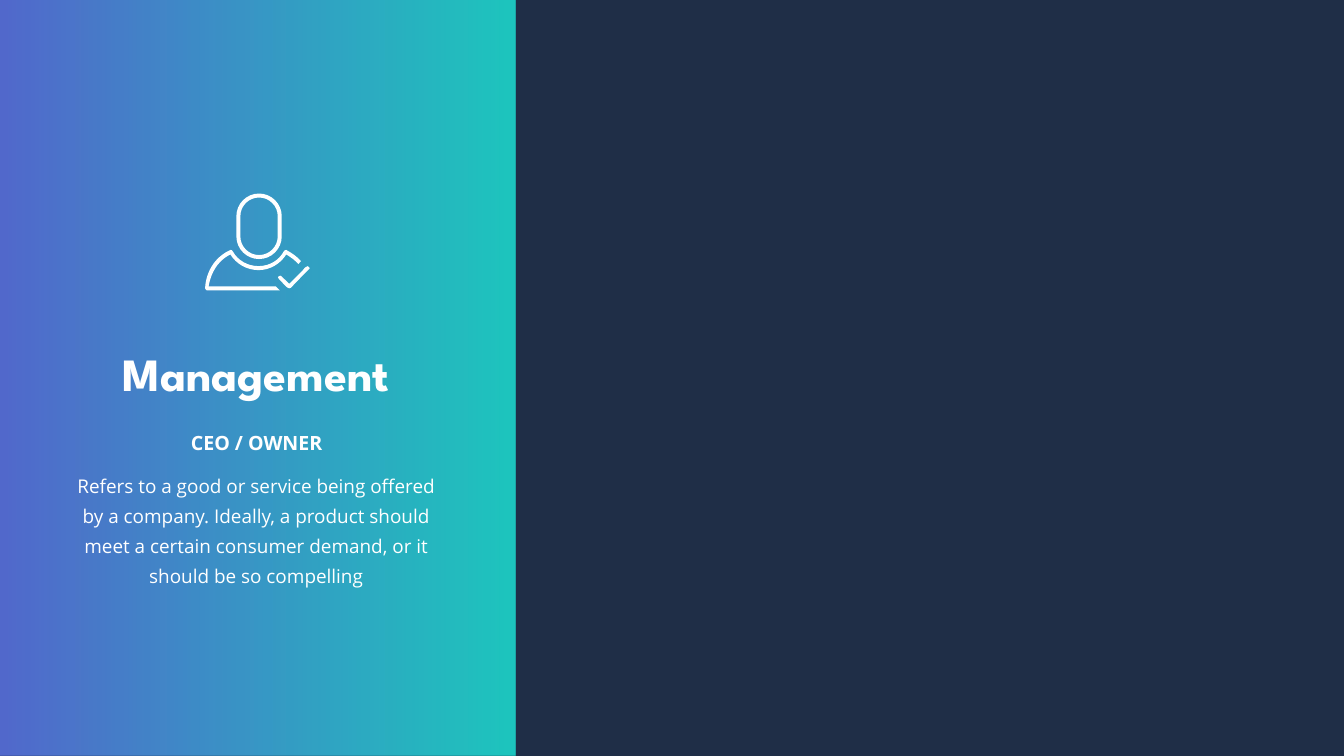
from dataclasses import dataclass

from lxml import etree
from pptx import Presentation
from pptx.dml.color import RGBColor
from pptx.enum.shapes import MSO_SHAPE
from pptx.enum.text import MSO_ANCHOR, MSO_AUTO_SIZE, PP_ALIGN
from pptx.oxml.ns import qn
from pptx.util import Pt

RECT = MSO_SHAPE.RECTANGLE
CENTER = PP_ALIGN.CENTER
TOP, MIDDLE = MSO_ANCHOR.TOP, MSO_ANCHOR.MIDDLE
GROW = MSO_AUTO_SIZE.SHAPE_TO_FIT_TEXT


@dataclass(frozen=True)
class Theme:
    """Colours, fonts and type sizes of the slide."""
    background: str = "1F2E47"
    teal: str = "1DE7D8"
    violet: str = "5D76EA"
    white: str = "FFFFFF"
    opacity: int = 81
    heading_font: str = "League Spartan"
    body_font: str = "Open Sans"
    title: int = 66
    role: int = 28
    body: int = 27


THEME = Theme()
ICON_WIDTH = 150
ARC = 0.55
SHOULDERS = [
    (5, 132.5), (6.5, 124.6, 10.8, 100, 36, 87),
    (44.6, 100.8, 59.8, 109.4, 76.3, 109.4),
    (92.2, 109.4, 107.3, 100.8, 115.9, 87),
    (123.1, 91.4, 128.9, 95.8, 133.2, 100.8), (136.8, 96.5),
    (131.8, 90.7, 125.3, 85.7, 115.9, 80.6),
    (115.2, 80.6, 113, 80.6, 112.3, 82.8),
    (105.1, 95.8, 91.4, 103.7, 76.3, 103.7),
    (61.2, 103.7, 46.8, 95.8, 39.6, 82.8),
    (38.9, 80.6, 37.4, 80.6, 36, 80.6),
    (0, 97.2, 0, 134.6, 0, 135.4), (0, 136.1, 0, 136.8, 0.7, 136.8),
    (0.7, 137.5, 1.4, 138.2, 2.2, 138.2), (106.6, 138.2), (100.8, 132.5),
]
CHECK_MARK = [
    (145.4, 110.9), (148.3, 108), (149.8, 108, 149.8, 105.8, 148.3, 105.1),
    (147.6, 104.4, 146.9, 103.7, 146.2, 103.7),
    (145.4, 103.7, 144.7, 104.4, 144, 105.1), (142.6, 105.8),
    (139, 110.2), (120.2, 128.9), (108.7, 118.1),
    (108.7, 117.4, 108, 117.4, 107.3, 117.4),
    (106.6, 117.4, 105.8, 117.4, 105.1, 118.1),
    (103.7, 118.8, 103.7, 121, 105.1, 121.7), (115.9, 133.2),
    (118.1, 134.6), (118.8, 135.4, 119.5, 135.4, 120.2, 135.4),
    (121, 135.4, 121.7, 135.4, 122.4, 134.6), (123.8, 133.2), (141.1, 115.2),
]


def capsule(x, y, w, h):
    """Return the segments of an upright capsule that fills the box."""
    r = w / 2
    k = r * (1 - ARC)
    cx, right, bottom = x + r, x + w, y + h
    return [(x, y + r), (x, y + k, x + k, y, cx, y),
            (right - k, y, right, y + k, right, y + r), (right, bottom - r),
            (right, bottom - k, right - k, bottom, cx, bottom),
            (x + k, bottom, x, bottom - k, x, bottom - r)]


def bend(line, points):
    """Replace a straight path segment with a cubic curve."""
    curve = etree.Element(qn("a:cubicBezTo"))
    for px, py in points:
        etree.SubElement(curve, qn("a:pt"), x=str(px), y=str(py))
    line.getparent().replace(line, curve)


def add_outline(shapes, contours, x, y, scale):
    """Add one white freeform made of closed contours of lines and curves."""
    placed = [[[(Pt(x + px * scale), Pt(y + py * scale))
                for px, py in zip(seg[::2], seg[1::2])] for seg in contour]
              for contour in contours]
    builder = shapes.build_freeform(*placed[0][0][-1], scale=1.0)
    for i, contour in enumerate(placed):
        if i:
            builder.move_to(*contour[0][-1])
        builder.add_line_segments([seg[-1] for seg in contour[1:]], close=True)
    sp = builder.convert_to_shape()
    sp.shadow.inherit = False
    sp.fill.solid()
    sp.fill.fore_color.rgb = RGBColor.from_string(THEME.white)
    sp.line.fill.background()
    left, top = sp.left, sp.top
    lines = list(sp.element.iter(qn("a:lnTo")))
    segments = [seg for contour in placed for seg in contour[1:]]
    for line, seg in zip(lines, segments):
        if len(seg) == 3:
            bend(line, [(px - left, py - top) for px, py in seg])


def add_text(s, text, x, y, w, h, *, size, font=THEME.body_font, bold=False,
             wrap=False, anchor=TOP, leading=None, before=None, inset=(7.2, 3.6)):
    """Add a centred white text box; before is a percentage of a line."""
    sp = s.shapes.add_textbox(Pt(x), Pt(y), Pt(w), Pt(h))
    tf = sp.text_frame
    tf.word_wrap, tf.auto_size, tf.vertical_anchor = wrap, GROW, anchor
    tf.margin_left = tf.margin_right = Pt(inset[0])
    tf.margin_top = tf.margin_bottom = Pt(inset[1])
    p = tf.paragraphs[0]
    p.alignment = CENTER
    if leading:
        p.line_spacing = Pt(leading)
    if before:
        p.space_before = Pt(0)
        gap = next(sp.element.iter(qn("a:spcBef")))
        gap.remove(gap[0])
        etree.SubElement(gap, qn("a:spcPct"), val=str(before * 1000))
    r = p.add_run()
    r.text = text
    r.font.name, r.font.size, r.font.bold = font, Pt(size), bold
    r.font.color.rgb = RGBColor.from_string(THEME.white)


def add_gradient(s, x, y, w, h):
    """Add the translucent violet to teal rectangle."""
    sp = s.shapes.add_shape(RECT, Pt(x), Pt(y), Pt(w), Pt(h))
    sp.shadow.inherit = False
    sp.line.fill.background()
    sp.fill.gradient()
    sp.fill.gradient_angle = 180
    stops = ((0.01, THEME.teal), (0.99, THEME.violet))
    for stop, (position, color) in zip(sp.fill.gradient_stops, stops):
        stop.position = position
        stop.color.rgb = RGBColor.from_string(color)
    for color in sp.element.spPr.iter(qn("a:srgbClr")):
        etree.SubElement(color, qn("a:alpha")).set("val", str(THEME.opacity * 1000))


def add_manager_icon(s, x, y, w):
    """Add the grouped icon of a person with a check mark."""
    shapes = s.shapes.add_group_shape().shapes
    head = [capsule(50.3, 5.7, 53.4, 82.2), capsule(44.6, 0, 64.8, 93.6)]
    for contours in ([SHOULDERS], head, [CHECK_MARK]):
        add_outline(shapes, contours, x, y, w / ICON_WIDTH)


def add_management_panel(s, x, y, w, h):
    """Add the gradient panel with its texts and icon."""
    add_gradient(s, x, y, w, h)
    add_text(s, "Management", x + 128.2, y + 469.4, 474.5, 103, size=THEME.title,
             font=THEME.heading_font, bold=True, leading=100)
    add_text(s, "CEO / OWNER", x + 264.2, y + 612, 204.5, 41, size=THEME.role,
             bold=True, anchor=MIDDLE)
    add_text(s, "Refers to a good or service being offered by a company. Ideally, "
             "a product should meet a certain consumer demand, or it should be so "
             "compelling", x + 92.2, y + 658.3, 547.2, 190.8, size=THEME.body,
             wrap=True, leading=43, before=20, inset=(17.28, 8.64))
    add_manager_icon(s, x + 293, y + 276.5, ICON_WIDTH)


def main():
    """Build and save the slide."""
    prs = Presentation()
    prs.slide_width, prs.slide_height = Pt(1919.5), Pt(1080)
    s = prs.slides.add_slide(prs.slide_layouts[6])
    s.background.fill.solid()
    s.background.fill.fore_color.rgb = RGBColor.from_string(THEME.background)
    add_management_panel(s, 0, 0, 735.8, 1080)
    prs.save("out.pptx")


if __name__ == "__main__":
    main()
